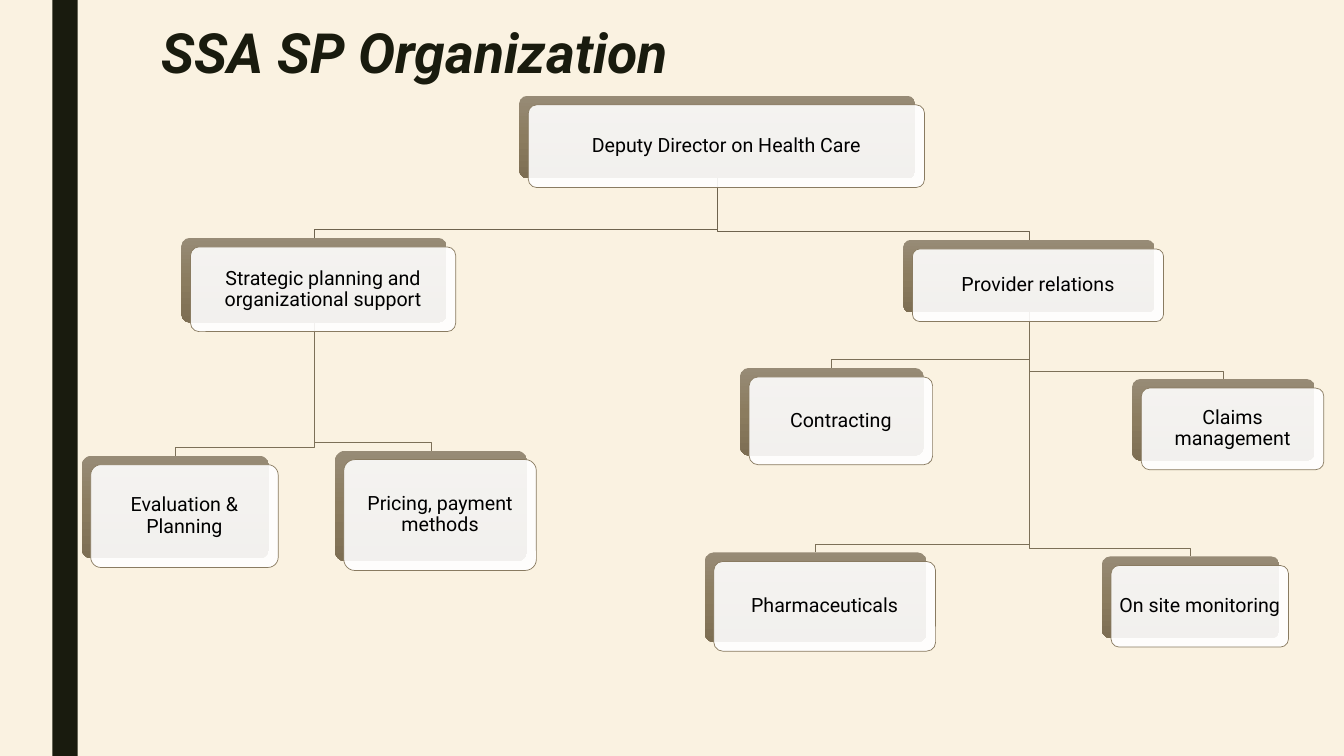
from copy import deepcopy
from dataclasses import dataclass

from pptx import Presentation
from pptx.dml.color import RGBColor
from pptx.enum.shapes import MSO_SHAPE
from pptx.enum.text import MSO_ANCHOR, MSO_AUTO_SIZE, PP_ALIGN
from pptx.oxml.ns import qn
from pptx.util import Inches, Pt
from lxml import etree

RECTANGLE = MSO_SHAPE.RECTANGLE
ROUNDED = MSO_SHAPE.ROUNDED_RECTANGLE
MIDDLE = MSO_ANCHOR.MIDDLE
LEFT, CENTER = PP_ALIGN.LEFT, PP_ALIGN.CENTER
NO_AUTOFIT = MSO_AUTO_SIZE.NONE
TITLE_ONLY = 5


@dataclass(frozen=True)
class Theme:
    """Colours, type sizes and shared measures of the slide."""
    font: str = "Roboto"
    background: str = "FAF2E1"
    dark: str = "191B0E"
    text: str = "000000"
    card: str = "FFFFFF"
    card_line: str = "897B61"
    top_link: str = "6E634E"
    link: str = "7C7058"
    gradient: tuple = ("978B76", "8B7C5F", "7D6E53")
    title_size: float = 39.6
    body_size: float = 14
    line_width: float = 0.5
    card_opacity: int = 90
    card_offset: float = 0.09
    link_drop: float = 0.08


@dataclass(frozen=True)
class Unit:
    """One organizational unit, its parent and its back plate in inches."""
    name: str
    parent: str
    left: float
    top: float
    width: float
    height: float


THEME = Theme()
DIRECTOR = "Deputy Director on Health Care"
PLANNING = "Strategic planning and organizational support"
PROVIDERS = "Provider relations"
UNITS = [
    Unit(DIRECTOR, "", 5.15, 0.95, 3.93, 0.82),
    Unit(PLANNING, DIRECTOR, 1.8, 2.36, 2.63, 0.84),
    Unit("Evaluation & Planning", PLANNING, 0.81, 4.52, 1.86, 1.02),
    Unit("Pricing, payment methods", PLANNING, 3.32, 4.47, 1.91, 1.1),
    Unit(PROVIDERS, DIRECTOR, 8.96, 2.38, 2.49, 0.72),
    Unit("Contracting", PROVIDERS, 7.34, 3.65, 1.82, 0.87),
    Unit("Pharmaceuticals", PROVIDERS, 6.99, 5.48, 2.2, 0.89),
    Unit("Claims management", PROVIDERS, 11.23, 3.76, 1.81, 0.81),
    Unit("On site monitoring", PROVIDERS, 10.93, 5.52, 1.76, 0.81),
]


def color(value):
    """Turn a hex string into a colour."""
    return RGBColor.from_string(value)


def write_text(shape, text, *, size, fill, align, spacing, inset, bold=False, italic=False):
    """Write one formatted paragraph into a shape."""
    frame = shape.text_frame
    frame.word_wrap = True
    frame.auto_size = NO_AUTOFIT
    frame.vertical_anchor = MIDDLE
    frame.margin_left = frame.margin_right = Inches(inset)
    frame.margin_top = frame.margin_bottom = Inches(0.05)
    paragraph = frame.paragraphs[0]
    paragraph.alignment = align
    paragraph.line_spacing = spacing
    run = paragraph.add_run()
    run.text = text
    font = run.font
    font.name, font.size = THEME.font, Pt(size)
    font.bold, font.italic = bold, italic
    font.color.rgb = color(fill)


def add_block(slide, kind, left, top, width, height):
    """Add a preset shape without shadow or outline."""
    shape = slide.shapes.add_shape(kind, *map(Inches, (left, top, width, height)))
    shape.shadow.inherit = False
    shape.line.fill.background()
    if kind == ROUNDED:
        shape.adjustments[0] = 0.1
    return shape


def fill_solid(shape, value):
    """Give a shape one plain fill colour."""
    shape.fill.solid()
    shape.fill.fore_color.rgb = color(value)


def draw_line(shape, value):
    """Give a shape a thin outline."""
    shape.line.color.rgb = color(value)
    shape.line.width = Pt(THEME.line_width)


def fill_gradient(shape):
    """Fill a shape from top to bottom with the three theme stops."""
    shape.fill.gradient()
    shape.fill.gradient_angle = 270
    first = shape.fill.gradient_stops[0]
    stop_list = shape.element.spPr.find(".//" + qn("a:gsLst"))
    first.color.rgb = color(THEME.gradient[0])
    stop_list.insert(1, deepcopy(stop_list[0]))
    for index, (stop, value) in enumerate(zip(shape.fill.gradient_stops, THEME.gradient)):
        stop.position = index / 2
        stop.color.rgb = color(value)


def set_opacity(shape, percent):
    """Make a solid fill partly transparent."""
    solid = shape.element.spPr.find(qn("a:solidFill"))
    etree.SubElement(solid[0], qn("a:alpha")).set("val", str(percent * 1000))


def add_link(slide, parent, child):
    """Draw an elbow line from a parent's bottom to a child's top."""
    start = parent.left + parent.width / 2, parent.top + parent.height
    end = child.left + child.width / 2, child.top
    bend = end[1] - THEME.link_drop
    points = [start, (start[0], bend), (end[0], bend), end]
    corners = [(Inches(x), Inches(y)) for x, y in points]
    builder = slide.shapes.build_freeform(*corners[0])
    builder.add_line_segments(corners[1:], close=False)
    shape = builder.convert_to_shape()
    shape.shadow.inherit = False
    shape.fill.background()
    draw_line(shape, THEME.link if parent.parent else THEME.top_link)


def add_unit(slide, unit):
    """Draw a gradient plate with a translucent labelled card over it."""
    size = unit.width, unit.height
    fill_gradient(add_block(slide, ROUNDED, unit.left, unit.top, *size))
    offset = THEME.card_offset
    card = add_block(slide, ROUNDED, unit.left + offset, unit.top + offset, *size)
    fill_solid(card, THEME.card)
    set_opacity(card, THEME.card_opacity)
    draw_line(card, THEME.card_line)
    write_text(card, unit.name, size=THEME.body_size, fill=THEME.text,
               align=CENTER, spacing=0.9, inset=0.05)


def add_title(slide, text):
    """Place and format the title placeholder."""
    title = slide.shapes.title
    title.left, title.top = Inches(1.5), Inches(0.25)
    title.width, title.height = Inches(10.5), Inches(0.61)
    write_text(title, text, size=THEME.title_size, fill=THEME.dark, align=LEFT,
               spacing=0.89, inset=0.1, bold=True, italic=True)


def main():
    """Build the organization chart slide."""
    presentation = Presentation()
    presentation.slide_width = Inches(13.33)
    presentation.slide_height = Inches(7.5)
    slide = presentation.slides.add_slide(presentation.slide_layouts[TITLE_ONLY])
    fill_solid(slide.background, THEME.background)
    fill_solid(add_block(slide, RECTANGLE, 0.52, 0, 0.25, 7.5), THEME.dark)
    add_title(slide, "SSA SP Organization")
    by_name = {unit.name: unit for unit in UNITS}
    for unit in UNITS:
        if unit.parent:
            add_link(slide, by_name[unit.parent], unit)
    for unit in UNITS:
        add_unit(slide, unit)
    presentation.save("out.pptx")


if __name__ == "__main__":
    main()
